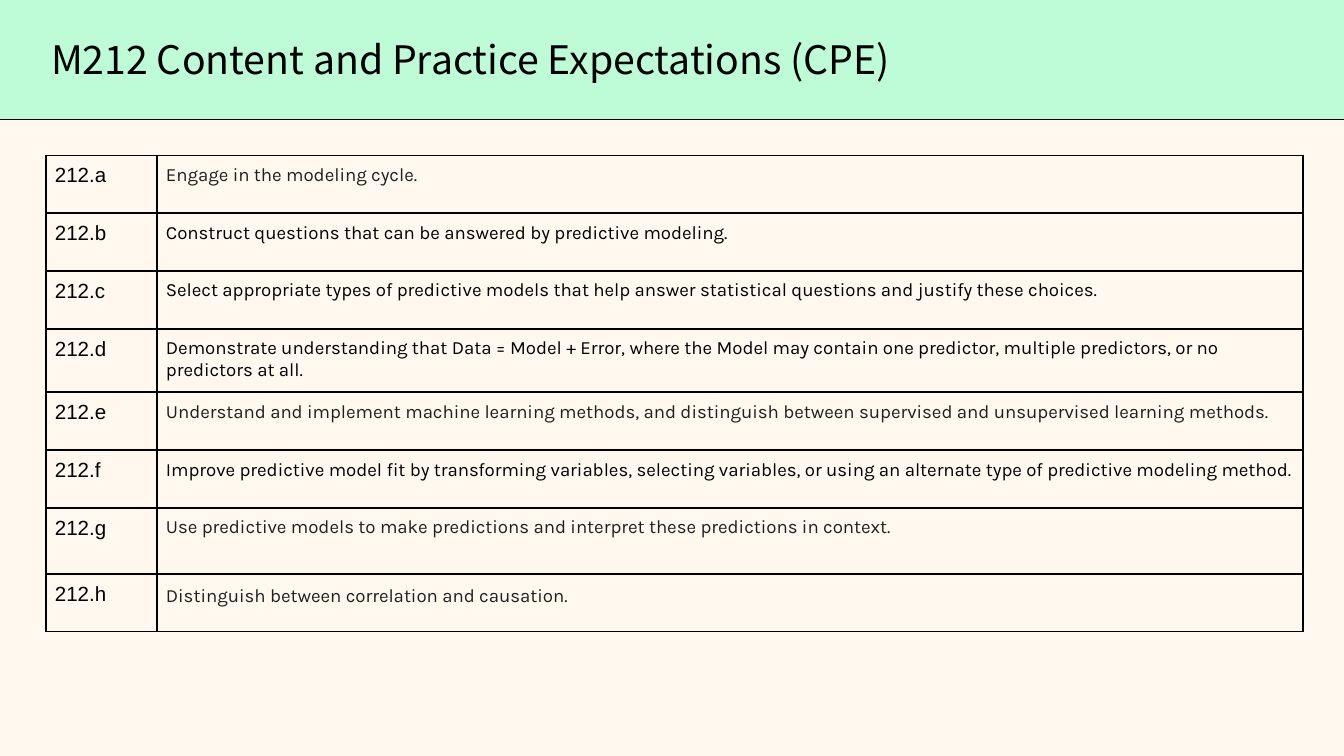
from typing import NamedTuple

from lxml import etree
from pptx import Presentation
from pptx.dml.color import RGBColor
from pptx.enum import shapes, text
from pptx.oxml import ns
from pptx.util import Pt

CREAM = RGBColor(0xFF, 0xF8, 0xEF)
MINT = RGBColor(0xBD, 0xFC, 0xD7)
BLACK = RGBColor(0x00, 0x00, 0x00)
CHARCOAL = RGBColor(0x1F, 0x1F, 0x1F)

SLIDE_WIDTH, SLIDE_HEIGHT = 720, 405
BAND_HEIGHT = 64
TABLE_LEFT, TABLE_TOP = 24.6, 83.2
COLUMN_WIDTHS = (59.5, 614)
ROW_HEIGHT = 31
CELL_MARGIN = 4.8
MARGINS = ("margin_left", "margin_top", "margin_right", "margin_bottom")


class Expectation(NamedTuple):
    code: str
    description: str
    color: RGBColor = BLACK
    height: float = ROW_HEIGHT
    line_spacing: float = 1.0


EXPECTATIONS = (
    Expectation("212.a", "Engage in the modeling cycle.", CHARCOAL),
    Expectation("212.b", "Construct questions that can be answered by predictive modeling."),
    Expectation("212.c", "Select appropriate types of predictive models that help answer "
                "statistical questions and justify these choices."),
    Expectation("212.d", "Demonstrate understanding that Data = Model + Error, where the Model "
                "may contain one predictor, multiple predictors, or no predictors at all.",
                height=34),
    Expectation("212.e", "Understand and implement machine learning methods, and distinguish "
                "between supervised and unsupervised learning methods.", CHARCOAL),
    Expectation("212.f", "Improve predictive model fit by transforming variables, selecting "
                "variables, or using an alternate type of predictive modeling method."),
    Expectation("212.g", "Use predictive models to make predictions and interpret these "
                "predictions in context.", CHARCOAL, height=35.3),
    Expectation("212.h", "Distinguish between correlation and causation.", CHARCOAL,
                line_spacing=1.15),
)


def set_attributes(target, values: dict) -> None:
    for name, value in values.items():
        setattr(target, name, value)


def write_text(frame, content: str, font: str, size: float, color: RGBColor,
               line_spacing: float = 1.0) -> None:
    paragraph = frame.paragraphs[0]
    set_attributes(paragraph, {"alignment": text.PP_ALIGN.LEFT, "line_spacing": line_spacing})
    run = paragraph.add_run()
    run.text = content
    set_attributes(run.font, {"name": font, "size": Pt(size), "bold": False})
    run.font.color.rgb = color


def add_borders(cell, color: RGBColor, width: float) -> None:
    """Draw all four sides, placed before the fill as the schema requires."""
    properties = cell._tc.get_or_add_tcPr()
    for position, side in enumerate(("lnL", "lnR", "lnT", "lnB")):
        line = etree.Element(ns.qn(f"a:{side}"), w=str(Pt(width)))
        fill = etree.SubElement(line, ns.qn("a:solidFill"))
        etree.SubElement(fill, ns.qn("a:srgbClr"), val=str(color))
        properties.insert(position, line)


def add_header(slide) -> None:
    title = slide.shapes.title
    band = slide.shapes.add_shape(shapes.MSO_SHAPE.RECTANGLE, 0, 0, Pt(SLIDE_WIDTH), Pt(BAND_HEIGHT))
    band.shadow.inherit = False
    band.fill.solid()
    band.fill.fore_color.rgb = MINT
    band.line.fill.background()
    title.element.addprevious(band.element)

    set_attributes(title, {"left": Pt(27.4), "top": Pt(21.6), "width": Pt(516), "height": Pt(23)})
    frame = title.text_frame
    set_attributes(frame, dict.fromkeys(MARGINS, 0))
    set_attributes(frame, {"word_wrap": True, "auto_size": text.MSO_AUTO_SIZE.NONE,
                           "vertical_anchor": text.MSO_ANCHOR.MIDDLE})
    write_text(frame, "M212 Content and Practice Expectations (CPE)",
               "Noto Sans CJK KR", 21, BLACK, 0.9)

    rule = slide.shapes.add_connector(shapes.MSO_CONNECTOR.STRAIGHT, Pt(SLIDE_WIDTH),
                                      Pt(BAND_HEIGHT), 0, Pt(BAND_HEIGHT))
    rule.line.color.rgb = BLACK
    rule.line.width = Pt(0.75)
    etree.SubElement(rule.element.spPr, ns.qn("a:effectLst"))


def add_expectations(slide, expectations: tuple[Expectation, ...]) -> None:
    table = slide.shapes.add_table(
        len(expectations), len(COLUMN_WIDTHS), Pt(TABLE_LEFT), Pt(TABLE_TOP),
        Pt(sum(COLUMN_WIDTHS)), Pt(sum(item.height for item in expectations))).table
    set_attributes(table, {"first_row": False, "horz_banding": False})
    for column, width in zip(table.columns, COLUMN_WIDTHS):
        column.width = Pt(width)
    for row, item in zip(table.rows, expectations):
        row.height = Pt(item.height)
        for cell in row.cells:
            set_attributes(cell, dict.fromkeys(MARGINS, Pt(CELL_MARGIN)))
            cell.fill.background()
            add_borders(cell, BLACK, 1)
        code_cell, description_cell = row.cells
        write_text(code_cell.text_frame, item.code, "Arial", 11, BLACK)
        write_text(description_cell.text_frame, item.description, "Karla", 10,
                   item.color, item.line_spacing)


def main() -> None:
    presentation = Presentation()
    set_attributes(presentation, {"slide_width": Pt(SLIDE_WIDTH), "slide_height": Pt(SLIDE_HEIGHT)})
    slide = presentation.slides.add_slide(presentation.slide_layouts.get_by_name("Title Only"))
    slide.background.fill.solid()
    slide.background.fill.fore_color.rgb = CREAM
    add_header(slide)
    add_expectations(slide, EXPECTATIONS)
    presentation.save("out.pptx")


if __name__ == "__main__":
    main()
